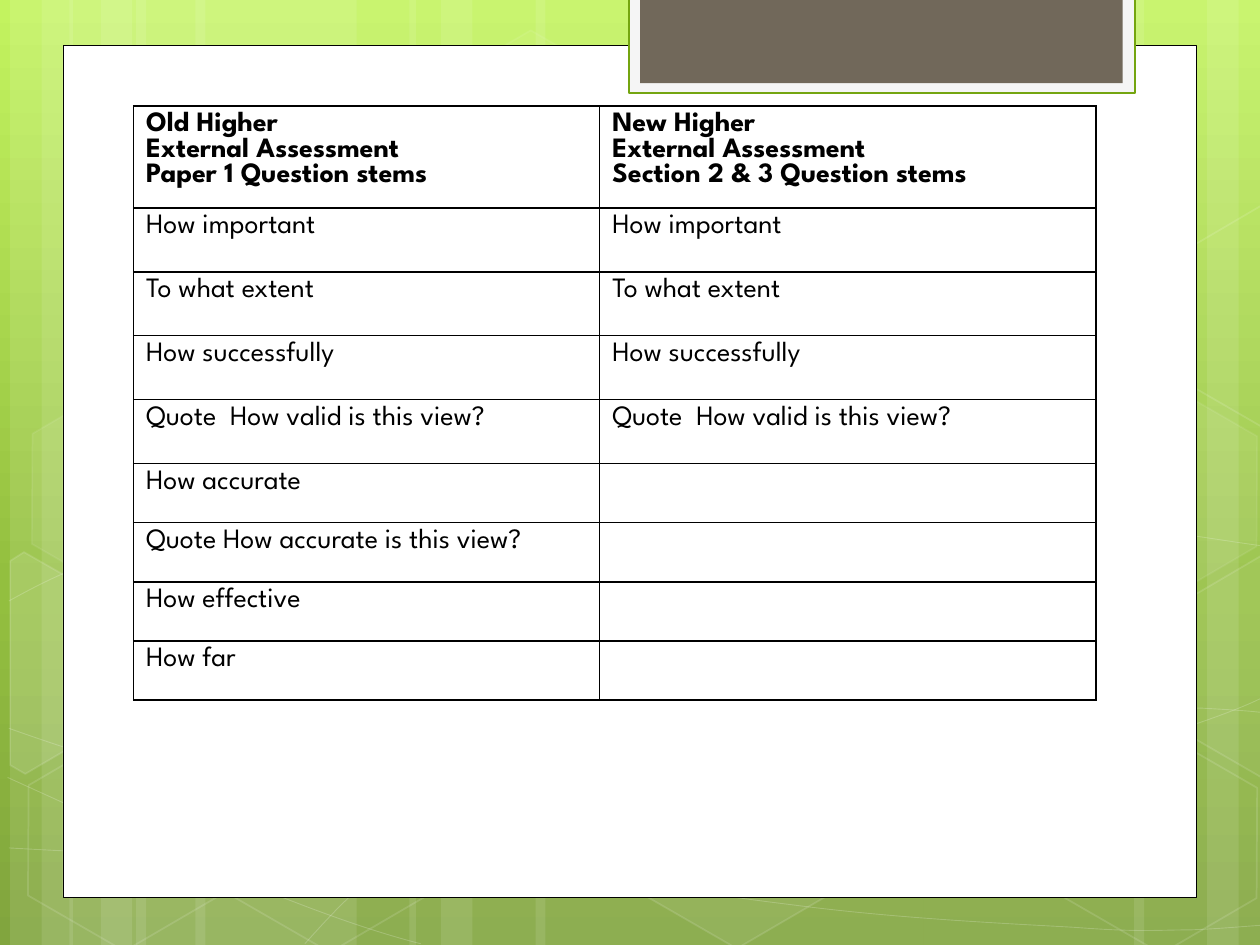
"""Build a slide comparing old and new Higher question stems over a green patterned background."""
from copy import deepcopy
from dataclasses import dataclass
from math import cos, radians, sin
from typing import NamedTuple, Optional

from lxml import etree
from pptx import Presentation, util as u
from pptx.dml.color import RGBColor
from pptx.enum import shapes, text
from pptx.oxml import ns


@dataclass(frozen=True)
class Theme:
    """Colours, font and sizes of the slide."""
    white: str = "FFFFFF"
    ink: str = "000000"
    tab: str = "F5F5F5"
    tab_edge: str = "74A510"
    tab_core: str = "71685A"
    gradient: tuple = ((0, "C3F35F"), (0.62, "93BF3F"), (1, "81A53E"))
    font: str = "League Spartan"
    size: int = 16


class Paint(NamedTuple):
    """Fill and outline; opacities are percentages."""
    fill: Optional[str] = None
    fill_opacity: int = 100
    line: Optional[str] = None
    width: float = 1
    line_opacity: int = 100


class Hexagon(NamedTuple):
    """Position and opacities of one tilted hexagon."""
    left: float
    top: float
    fill_opacity: int
    line_opacity: int


class CutHexagon(NamedTuple):
    """A tilted hexagon cut off by the page edge."""
    fill_opacity: int
    centre: tuple
    corners: list


THEME = Theme()
TILT = 30
STRIPES = [(1.08, 1.75, 0), (0.08, 0.5, 0), (0.33, 0.83, 0), (1.55, 1.75, 0), (0.55, 0.5, 0), (0.8, 0.83, 0),
           (7.33, 1.75, 180), (9.58, 0.5, 180), (9, 0.83, 180), (4.25, 3.08, 0), (3.25, 0.5, 0), (3.5, 0.83, 0)]
CURVES = [
    [[(0.07, 6.73)], [(0.61, 6.76), (1.15, 6.79), (1.9, 6.78)], [(2.65, 6.77), (3.58, 6.75), (4.58, 6.65)],
     [(5.58, 6.55), (7, 6.36), (7.92, 6.17)], [(8.83, 5.98), (9.77, 5.68), (10.07, 5.51)]],
    [[(0.07, 4.77)], [(0.36, 4.61), (0.65, 4.46), (1.21, 4.31)], [(1.78, 4.16), (2.59, 3.94), (3.47, 3.87)],
     [(4.36, 3.8), (5.44, 3.79), (6.54, 3.87)], [(7.64, 3.95), (9.47, 4.26), (10.07, 4.34)]],
    [[(0.06, 6.17)], [(1.27, 6.72), (2.47, 7.27), (3.34, 7.49)]],
    [[(0.07, 5.78)], [(0.38, 5.89), (0.7, 6), (1.28, 6.16)], [(1.86, 6.31), (2.73, 6.56), (3.57, 6.73)],
     [(4.4, 6.9), (5.45, 7.08), (6.28, 7.18)], [(7.11, 7.29), (8, 7.33), (8.53, 7.36)],
     [(9.05, 7.4), (9.19, 7.38), (9.45, 7.38)], [(9.71, 7.37), (9.89, 7.35), (10.07, 7.34)]],
    [[(2.42, 7.49)], [(2.6, 7.29), (2.78, 7.09), (3.02, 6.91)], [(3.26, 6.73), (3.6, 6.53), (3.88, 6.39)],
     [(4.16, 6.25), (4.33, 6.19), (4.7, 6.09)], [(5.06, 5.99), (5.73, 5.85), (6.08, 5.78)],
     [(6.44, 5.71), (6.49, 5.71), (6.8, 5.69)], [(7.11, 5.66), (7.6, 5.63), (7.94, 5.62)],
     [(8.29, 5.61), (8.86, 5.62), (8.86, 5.62)], [(9.53, 5.62)], [(9.71, 5.63), (9.88, 5.64), (9.97, 5.65)],
     [(10.06, 5.66), (10.03, 5.65), (10.06, 5.66)]],
]
HEXAGONS = [Hexagon(3.34, 0.36, 4, 8), Hexagon(4.97, 5.89, 6, 12), Hexagon(0.11, 5.91, 0, 12),
            Hexagon(0.14, 3.12, 7, 8), Hexagon(1.74, 5.92, 0, 12), Hexagon(7.53, 4.53, 10, 12),
            Hexagon(8.34, 5.93, 0, 12), Hexagon(8.34, 3.14, 7, 8)]
CUT_HEXAGONS = [
    CutHexagon(10, (0.36, 5.35), [(0.08, 4.45), (0.19, 4.38), (0.96, 4.82), (0.95, 5.7), (0.2, 6.14), (0.08, 6.07)]),
    CutHexagon(4, (9.85, 5.2), [(9.26, 4.85), (10.01, 4.41), (10.09, 4.46), (10.09, 6.13), (10.02, 6.17), (9.26, 5.73)]),
    CutHexagon(0, (9.85, 2.41), [(9.26, 2.07), (10.01, 1.63), (10.1, 1.68), (10.09, 3.35), (10.02, 3.39), (9.26, 2.95)]),
]
HEADINGS = ("Old Higher\nExternal Assessment\nPaper 1 Question stems",
            "New Higher\nExternal Assessment\nSection 2 & 3 Question stems")
SHARED_STEMS = ("How important", "To what extent", "How successfully", "Quote  How valid is this view?")
OLD_STEMS = ("How accurate", "Quote How accurate is this view?", "How effective", "How far")


def apply_paint(shape, paint: Paint) -> None:
    """Give a shape its fill and outline, without a shadow."""
    shape.shadow.inherit = False
    for fill, colour, opacity in ((shape.fill, paint.fill, paint.fill_opacity),
                                  (shape.line.fill, paint.line, paint.line_opacity)):
        if not (colour and opacity):
            fill.background()
            continue
        fill.solid()
        fill.fore_color.rgb = RGBColor.from_string(colour)
        if opacity < 100:
            node = fill._xPr.find(".//" + ns.qn("a:srgbClr"))
            etree.SubElement(node, ns.qn("a:alpha"), val=str(opacity * 1000))
    if paint.line:
        shape.line.width = u.Pt(paint.width)


def add_preset(page, kind, left: float, top: float, width: float, height: float, paint: Paint):
    """Add a painted preset shape."""
    shape = page.shapes.add_shape(kind, *map(u.Inches, (left, top, width, height)))
    apply_paint(shape, paint)
    return shape


def add_outline(page, points: list, paint: Paint, close: bool):
    """Add a painted freeform through the points."""
    start, *rest = [(u.Inches(x), u.Inches(y)) for x, y in points]
    builder = page.shapes.build_freeform(*start)
    builder.add_line_segments(rest, close=close)
    shape = builder.convert_to_shape()
    apply_paint(shape, paint)
    return shape


def add_curve(page, segments: list, paint: Paint) -> None:
    """Add an open freeform whose three-point segments are cubic curves."""
    shape = add_outline(page, [point for segment in segments for point in segment], paint, False)
    nodes = iter(shape._element.findall(".//" + ns.qn("a:lnTo")))
    for segment in segments[1:]:
        first, *others = [next(nodes) for _ in segment]
        if others:
            first.tag = ns.qn("a:cubicBezTo")
        for node in others:
            first.append(node[0])
            node.getparent().remove(node)


def add_cut_hexagon(page, item: CutHexagon) -> None:
    """Add a cut hexagon, turned upright and then tilted as a shape."""
    (x0, y0), c, s = item.centre, cos(radians(TILT)), sin(radians(TILT))
    upright = [(x0 + (x - x0) * c + (y - y0) * s, y0 - (x - x0) * s + (y - y0) * c) for x, y in item.corners]
    add_outline(page, upright, Paint(THEME.white, item.fill_opacity, THEME.white, 1, 12), True).rotation = TILT


def paint_background(page) -> None:
    """Fill the page with a downward gradient."""
    fill = page.background.fill
    fill.gradient()
    fill.gradient_angle = 270
    stop_list = page.element.find(".//" + ns.qn("a:gsLst"))
    stop_list.append(deepcopy(stop_list[-1]))
    for stop, (position, colour) in zip(fill.gradient_stops, THEME.gradient):
        stop.position = position
        stop.color.rgb = RGBColor.from_string(colour)


def add_pattern(page) -> None:
    """Draw the stripes, curves and hexagons."""
    white = THEME.white
    for left, width, turn in STRIPES:
        add_preset(page, shapes.MSO_SHAPE.RECTANGLE, left, 0, width, 7.5, Paint(white, 10)).rotation = turn
    for segments in CURVES:
        add_curve(page, segments, Paint(line=white, width=0.5, line_opacity=20))
    for item in HEXAGONS:
        hexagon = add_preset(page, shapes.MSO_SHAPE.HEXAGON, item.left, item.top, 1.75, 1.52,
                             Paint(white, item.fill_opacity, white, 1, item.line_opacity))
        hexagon.adjustments[0] = 0.285
        hexagon.rotation = TILT
    for item in CUT_HEXAGONS:
        add_cut_hexagon(page, item)


def add_panel(page) -> None:
    """Draw the white panel and the tab at its top."""
    rectangle = shapes.MSO_SHAPE.RECTANGLE
    add_preset(page, rectangle, 0.5, 0.36, 9, 6.76, Paint(THEME.white, line=THEME.ink, width=0.5))
    add_preset(page, rectangle, 4.99, -0.02, 4.02, 0.76, Paint(THEME.tab, line=THEME.tab_edge, width=1.25))
    add_preset(page, rectangle, 5.08, -0.02, 3.83, 0.68, Paint(THEME.tab_core))


def format_cell(cell, words: str, bold: bool) -> None:
    """Write a cell, rule its four sides and leave it unfilled."""
    for side in ("lnL", "lnR", "lnT", "lnB"):
        border = etree.SubElement(cell._tc.get_or_add_tcPr(), ns.qn(f"a:{side}"), w=str(u.Pt(1)))
        solid = etree.SubElement(border, ns.qn("a:solidFill"))
        etree.SubElement(solid, ns.qn("a:srgbClr"), val=THEME.ink)
    cell.fill.background()
    cell.vertical_anchor = text.MSO_ANCHOR.TOP
    cell.text = words
    for span in (span for para in cell.text_frame.paragraphs for span in para.runs):
        span.font.name, span.font.size, span.font.bold = THEME.font, u.Pt(THEME.size), bold
        span.font.color.rgb = RGBColor.from_string(THEME.ink)


def add_stems(page) -> None:
    """Add the table of question stems, with extra room under the shared ones."""
    rows = [HEADINGS, *((stem, stem) for stem in SHARED_STEMS), *((stem, "") for stem in OLD_STEMS)]
    widths = (3.7, 3.94)
    table = page.shapes.add_table(len(rows), len(widths), *map(u.Inches, (1.06, 0.84, sum(widths), 5.47))).table
    table.first_row = table.horz_banding = False
    for column, width in zip(table.columns, widths):
        column.width = u.Inches(width)
    for index, (row, stems) in enumerate(zip(table.rows, rows)):
        row.height = u.Inches(0.47 if index else 0.81)
        for cell, words in zip(row.cells, stems):
            format_cell(cell, words, bold=index == 0)
            if stems[0] in SHARED_STEMS:
                cell.margin_bottom = u.Pt(18.25)


def main() -> None:
    """Build and save the deck."""
    deck = Presentation()
    deck.slide_width, deck.slide_height = u.Inches(10), u.Inches(7.5)
    page = deck.slides.add_slide(deck.slide_layouts[6])
    paint_background(page)
    add_pattern(page)
    add_panel(page)
    add_stems(page)
    deck.save("out.pptx")


if __name__ == "__main__":
    main()
